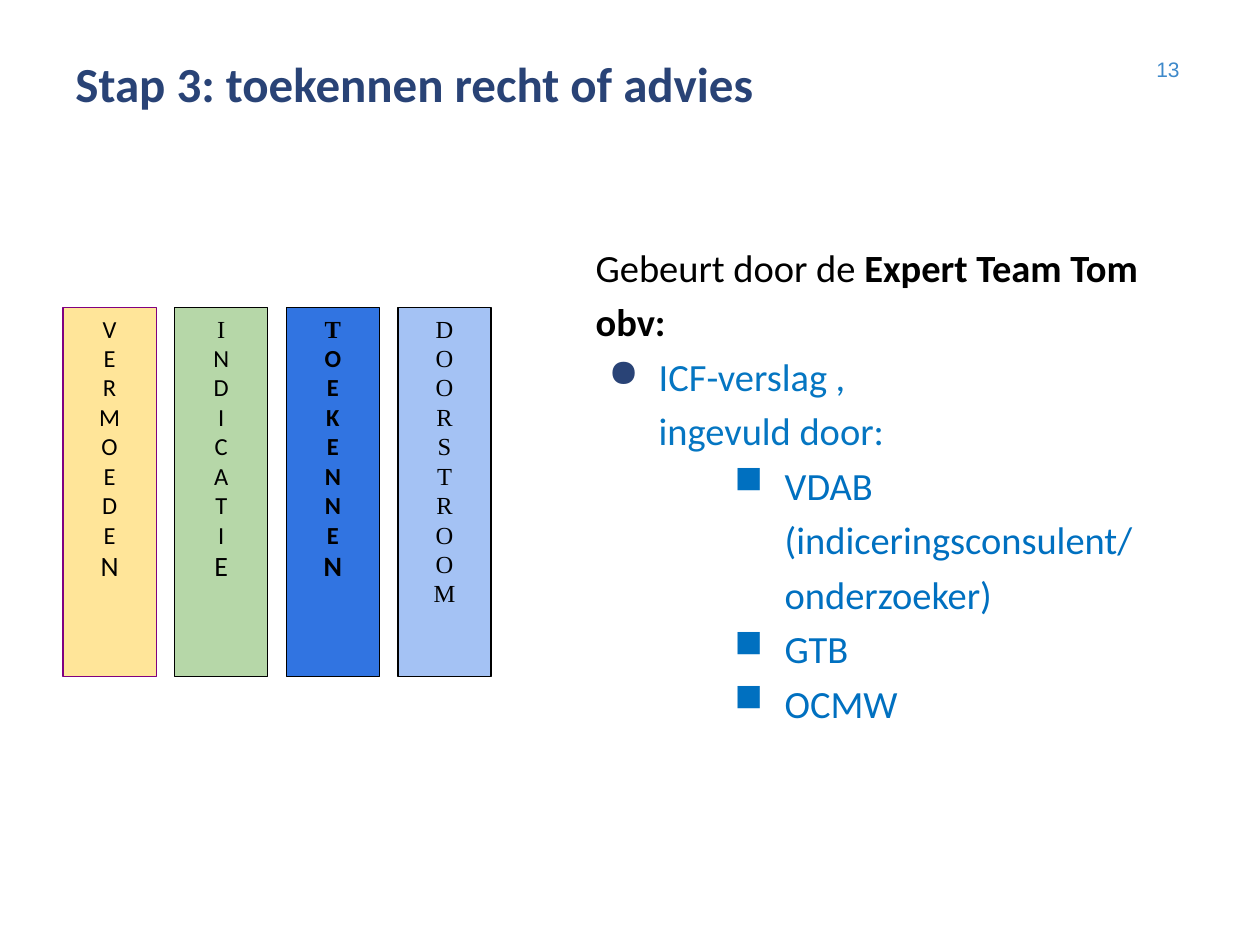
"""Build the slide on step 3, with four letter columns and a bullet list."""
from lxml import etree
from pptx import Presentation
from pptx.dml.color import RGBColor
from pptx.enum import shapes, text
from pptx.oxml.ns import qn
from pptx.util import Pt


def hue(code):
    return RGBColor.from_string(code)


def write(para, words, **look):
    run = para.add_run()
    run.text = words
    style = {"name": "Calibri", "size": 22, "bold": False, "color": "000000"} | look
    run.font.color.rgb = hue(style.pop("color"))
    style["size"] = Pt(style["size"])
    for key, value in style.items():
        setattr(run.font, key, value)


deck = Presentation()
deck.slide_width, deck.slide_height = Pt(720), Pt(540)
slide = deck.slides.add_slide(deck.slide_layouts[6])

frames = {}
for name, box, anchor in [
    ("title", (36, 15.84, 473.76, 51.84), text.MSO_ANCHOR.BOTTOM),
    ("number", (516.24, 13.68, 164.88, 51.84), text.MSO_ANCHOR.MIDDLE),
    ("body", (333.36, 131.04, 352.8, 311.04), text.MSO_ANCHOR.TOP),
]:
    frame = slide.shapes.add_textbox(*map(Pt, box)).text_frame
    frame.word_wrap = True
    frame.vertical_anchor = anchor
    frames[name] = frame

write(frames["title"].paragraphs[0], "Stap 3: toekennen recht of advies",
      size=28, bold=True, color="294376")
page = frames["number"].paragraphs[0]
page.alignment = text.PP_ALIGN.RIGHT
write(page, "13", name="Arial", size=12, color="3E89CA")

intro = frames["body"].paragraphs[0]
intro.line_spacing = 1.18
write(intro, "Gebeurt door de ")
write(intro, "Expert Team Tom obv:", bold=True)

for words, level, left, hang, mark, tint in [
    ("ICF-verslag ,", 0, 36, -28.8, "●", "294376"),
    ("ingevuld door:", 0, 36, 0, None, None),
    ("VDAB (indiceringsconsulent/ onderzoeker)", 2, 108, -28.8, "■", "0070C0"),
    ("GTB", 2, 108, -28.8, "■", "0070C0"),
    ("OCMW", 2, 108, -28.8, "■", "0070C0"),
]:
    para = frames["body"].add_paragraph()
    para.level = level
    para.line_spacing = 1.18
    props = para._p.get_or_add_pPr()
    props.set("marL", str(Pt(left)))
    props.set("indent", str(Pt(hang)))
    if mark:
        shade = etree.SubElement(props, qn("a:buClr"))
        etree.SubElement(shade, qn("a:srgbClr"), val=tint)
        etree.SubElement(props, qn("a:buChar"), char=mark)
    write(para, words, color="0070C0" if level else "0576C2")

serif = "Times New Roman"
for col, (word, fill, edge, first, rest, last, bold) in enumerate([
    ("VERMOEDEN", "FFE599", "800080", "Calibri", "Calibri", 16, False),
    ("INDICATIE", "B6D7A8", "000000", serif, "Calibri", 16, False),
    ("TOEKENNEN", "3174E1", "000000", serif, "Calibri", 16, True),
    ("DOORSTROOM", "A4C2F4", "000000", serif, serif, 14, False),
]):
    bar = slide.shapes.add_shape(shapes.MSO_SHAPE.RECTANGLE, Pt(36 + 63.8 * col),
                                 Pt(175.68), Pt(53.28), Pt(210.96))
    bar.shadow.inherit = False
    bar.fill.solid()
    bar.fill.fore_color.rgb = hue(fill)
    bar.line.color.rgb = hue(edge)
    bar.line.width = Pt(0.75)
    frame = bar.text_frame
    frame.word_wrap = True
    frame.vertical_anchor = text.MSO_ANCHOR.TOP
    for spot, letter in enumerate(word):
        para = frame.add_paragraph() if spot else frame.paragraphs[0]
        para.alignment = text.PP_ALIGN.CENTER
        write(para, letter, name=rest if spot else first, bold=bold,
              size=last if spot == len(word) - 1 else 14)

deck.save("out.pptx")
